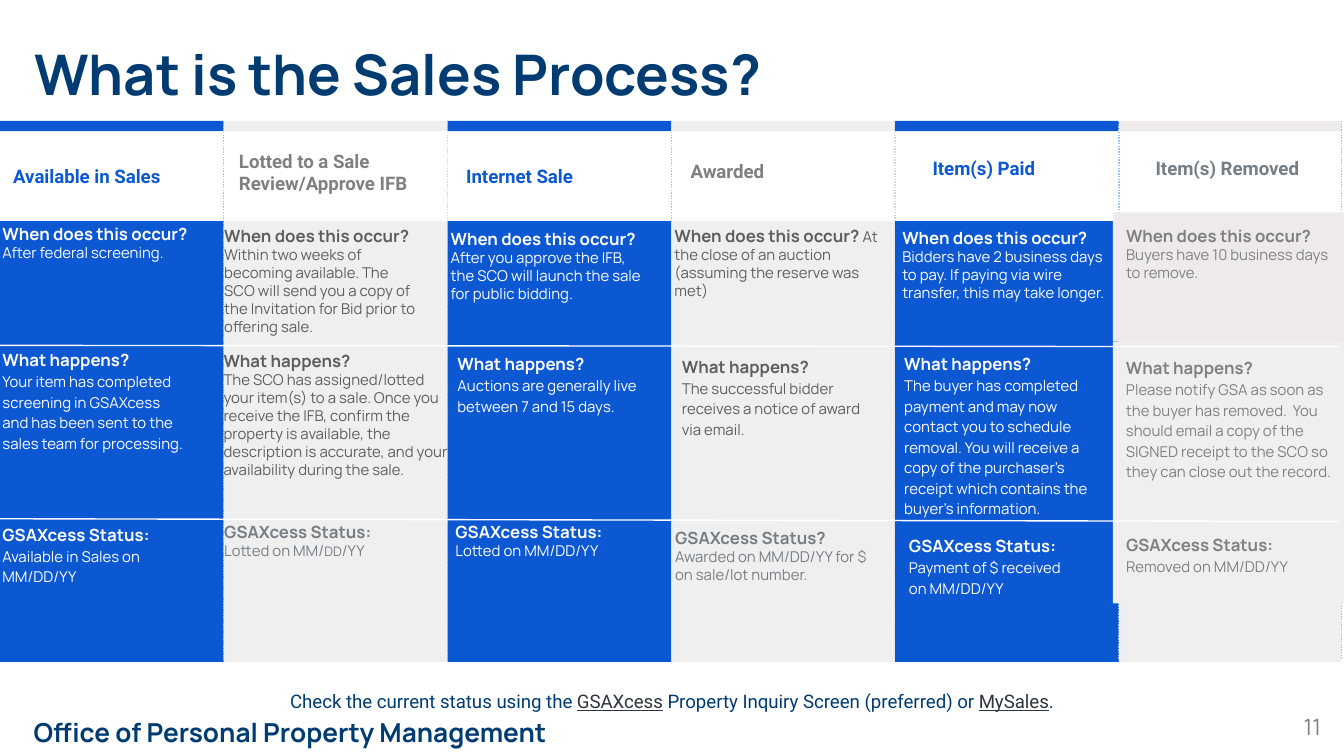
import pptx
import pptx.dml.color
import pptx.enum.dml
import pptx.enum.shapes
import pptx.enum.text
import pptx.oxml
import pptx.util
from dataclasses import dataclass

ALIGN = pptx.enum.text.PP_ALIGN
ANCHOR = pptx.enum.text.MSO_ANCHOR
SHAPE = pptx.enum.shapes.MSO_SHAPE


@dataclass(frozen=True)
class Theme:
    display: str = "Manrope"
    label: str = "Roboto"
    navy: str = "003C71"
    blue: str = "0C58D3"
    pale_blue: str = "A1C3FA"
    white: str = "FFFFFF"
    light: str = "EFEFEF"
    warm: str = "EEEAEA"
    dotted: str = "D9D9D9"
    dark: str = "5E5E5E"
    gray: str = "808080"
    slate: str = "767E85"
    ink: str = "2E363D"
    title: int = 30
    footer: int = 14
    number: int = 12
    heading: int = 10
    lead: int = 9
    body: int = 8
    small: int = 7


theme = Theme()
presentation = pptx.Presentation()
presentation.slide_width = pptx.util.Inches(10)
presentation.slide_height = presentation.slide_width * 9 // 16
slide = presentation.slides.add_slide(presentation.slide_layouts[6])
unit = presentation.slide_width / 100
column = 16.65
right_edge = 99.8
header_top, strip_height = 9, 0.75
body_top, body_height = 16.45, 32.8
line_bottom = 49.1


def add_box(box, paragraphs=(), fill=None, inset=1, spacing=1, anchor=ANCHOR.TOP, align=ALIGN.LEFT):
    place = [round(length * unit) for length in box]
    if fill:
        shape = slide.shapes.add_shape(SHAPE.RECTANGLE, *place)
        shape.shadow.inherit = False
        shape.fill.solid()
        shape.fill.fore_color.rgb = pptx.dml.color.RGBColor.from_string(fill)
        shape.line.fill.background()
    else:
        shape = slide.shapes.add_textbox(*place)
    frame = shape.text_frame
    frame.word_wrap = True
    frame.vertical_anchor = anchor
    frame.margin_left = frame.margin_right = frame.margin_top = frame.margin_bottom = round(inset * unit)
    for index, runs in enumerate(paragraphs):
        paragraph = frame.add_paragraph() if index else frame.paragraphs[0]
        paragraph.alignment = align
        paragraph.line_spacing = spacing
        for text, size, font, colour, bold, underline in runs:
            run = paragraph.add_run()
            run.text = text
            run.font.size = pptx.util.Pt(size)
            run.font.name = font
            run.font.bold = bold
            run.font.underline = underline
            run.font.color.rgb = pptx.dml.color.RGBColor.from_string(colour)


def add_line(ends, colour, dotted=False):
    line = slide.shapes.add_connector(
        pptx.enum.shapes.MSO_CONNECTOR.STRAIGHT, *[round(length * unit) for length in ends])
    line.line.color.rgb = pptx.dml.color.RGBColor.from_string(colour)
    line.line.width = pptx.util.Pt(0.75)
    if dotted:
        line.line.dash_style = pptx.enum.dml.MSO_LINE.ROUND_DOT
    line._element.spPr.append(pptx.oxml.parse_xml(
        '<a:effectLst xmlns:a="http://schemas.openxmlformats.org/drawingml/2006/main"/>'))


stages = [
    dict(fill=theme.blue, strip=theme.blue, line=theme.pale_blue, colour=theme.white,
         heading=(["Available in Sales"], theme.blue, (0, 11.05, 16.7, 4), 1.15, ANCHOR.TOP)),
    dict(fill=theme.light, strip=theme.light, line=theme.dotted, colour=theme.dark,
         heading=(["Lotted to a Sale", "Review/Approve IFB"], theme.gray, (16.8, 9.95, 16.3, 5.7), 1, ANCHOR.MIDDLE)),
    dict(fill=theme.blue, strip=theme.blue, line=theme.pale_blue, colour=theme.white,
         heading=(["Internet Sale"], theme.blue, (33.7, 11.05, 15.8, 3.7), 1.15, ANCHOR.TOP)),
    dict(fill=theme.light, strip=theme.light, line=theme.dotted, colour=theme.dark,
         heading=(["Awarded"], theme.gray, (50.4, 9.9, 16.3, 5.7), 1, ANCHOR.MIDDLE)),
    dict(fill=theme.blue, strip=theme.blue, line=theme.pale_blue, colour=theme.white,
         heading=(["Item(s) Paid"], theme.blue, (68.4, 10.45, 13.2, 5.4), 1.15, ANCHOR.TOP)),
    dict(fill=theme.light, strip=theme.warm, line=theme.pale_blue, colour=theme.gray,
         heading=(["Item(s) Removed"], theme.slate, (85, 10.45, 13, 5.4), 1.15, ANCHOR.TOP)),
]

occurs, happens, status = "When does this occur?", "What happens?", "GSAXcess Status:"
details = [
    (0, occurs + " ", ["After federal screening."], (-0.8, 15.65, 17.5, 9.6), 1, None, None),
    (1, occurs + " ", ["Within two weeks of becoming available. The SCO will send you a copy of the "
     "Invitation for Bid prior to offering sale."], (15.7, 15.8, 16.7, 9.6), 1, None, None),
    (2, occurs, ["After you approve the IFB, the SCO will launch the sale for public bidding."],
     (32.55, 16, 16.7, 9.6), 1, None, None),
    (3, occurs + " ", ["At the close of an auction (assuming the reserve was met)"],
     (49.2, 15.8, 17.7, 9.6), 1, None, None),
    (4, occurs, ["Bidders have 2 business days to pay. If paying via wire transfer, this may take longer."],
     (66.15, 15.95, 17.5, 9.6), 1, None, None),
    (5, occurs + " ", ["Buyers have 10 business days to remove."],
     (82.8, 15.8, 17.5, 9.6), 1, None, theme.warm),
    (0, happens, ["Your item has completed screening in GSAXcess and has been sent to the sales team "
     "for processing."], (-0.8, 24.8, 15.7, 12.6), 1.15, None, None),
    (1, happens, ["The SCO has assigned/lotted your item(s) to a sale. Once you receive the IFB, confirm "
     "the property is available, the description is accurate, and your availability during the sale."],
     (15.65, 25.1, 19, 15.5), 1, None, None),
    (2, happens, ["Auctions are generally live between 7 and 15 days."],
     (33.05, 25.1, 17.3, 15.5), 1.15, None, None),
    (3, happens, ["The successful bidder receives a notice of award via email."],
     (49.75, 25.3, 15.8, 20.6), 1.15, None, None),
    (4, happens, ["The buyer has completed payment and may now contact you to schedule removal. You will "
     "receive a copy of the purchaser’s receipt which contains the buyer’s information."],
     (66.3, 25.1, 16.3, 21.8), 1.15, None, None),
    (5, happens, ["Please notify GSA as soon as the buyer has removed.  You should email a copy of the "
     "SIGNED receipt to the SCO so they can close out the record."],
     (82.8, 25.4, 17.7, 19.5), 1.15, None, theme.light),
    (0, status, ["Available in Sales on MM/DD/YY"], (-0.8, 37.8, 15.7, 8.1), 1.15, None, None),
    (1, status, ["Lotted on MM/", "DD", "/YY"], (15.7, 37.8, 14.5, 4.9), 1, theme.slate, None),
    (2, status, ["Lotted on MM/DD/YY"], (32.9, 37.8, 15.8, 4.9), 1, None, None),
    (3, "GSAXcess Status?", ["Awarded on MM/DD/YY for $ on sale/lot number."],
     (49.25, 38.25, 16.8, 6.2), 1, theme.slate, None),
    (4, status + " ", ["Payment of $ received on MM/DD/YY"], (66.65, 38.65, 14.5, 11.5), 1.15, None, None),
    (5, status + " ", ["Removed on MM/DD/YY"], (82.8, 38.55, 14.5, 6.7), 1.15, None, None),
]

add_box((2.5, 53.5, 44.2, 1.9),
        [[("Office of Personal Property Management", theme.footer, theme.display, theme.navy, True, False)]],
        inset=0, anchor=ANCHOR.MIDDLE)
add_box((2.55, 2.95, 85.1, 5.6),
        [[("What is the Sales Process?", theme.title, theme.display, theme.navy, True, False)]], inset=0)
add_box((92.3, 53.1, 6, 3.1),
        [[("11", theme.number, theme.display, theme.gray, False, False)]], inset=0, align=ALIGN.RIGHT)

for index, stage in enumerate(stages):
    left = index * column
    right = min(left + column, right_edge)
    add_box((left, body_top, right - left, body_height), fill=stage["fill"])
    add_box((left, header_top, right - left, strip_height), fill=stage["strip"])
    add_line((right, header_top, right, line_bottom), stage["line"], dotted=True)
    lines, colour, box, spacing, anchor = stage["heading"]
    add_box(box, [[(line, theme.heading, theme.label, colour, True, False)] for line in lines],
            spacing=spacing, anchor=anchor)

for index, lead, pieces, box, spacing, colour, fill in details:
    colour = colour or stages[index]["colour"]
    lead_runs = [(lead, theme.lead, theme.display, colour, True, False)]
    body_runs = [(piece, theme.small if order % 2 else theme.body, theme.display, colour, False, False)
                 for order, piece in enumerate(pieces)]
    paragraphs = [lead_runs + body_runs] if lead.endswith(" ") else [lead_runs, body_runs]
    add_box(box, paragraphs, fill=fill, spacing=spacing)

for start, end in ((25.7, 25.8), (38.6, 38.8)):
    add_line((0, start, 99.6, end), theme.white)

notice = [("Check the current status using the ", False), ("GSAXcess", True),
          (" Property Inquiry Screen (preferred) or ", False), ("MySales", True), (".", False)]
add_box((0, 50.15, 100, 3.7),
        [[(text, theme.heading, theme.label, theme.ink if linked else theme.navy, False, linked)
          for text, linked in notice]], spacing=1.15, align=ALIGN.CENTER)

presentation.save("out.pptx")
